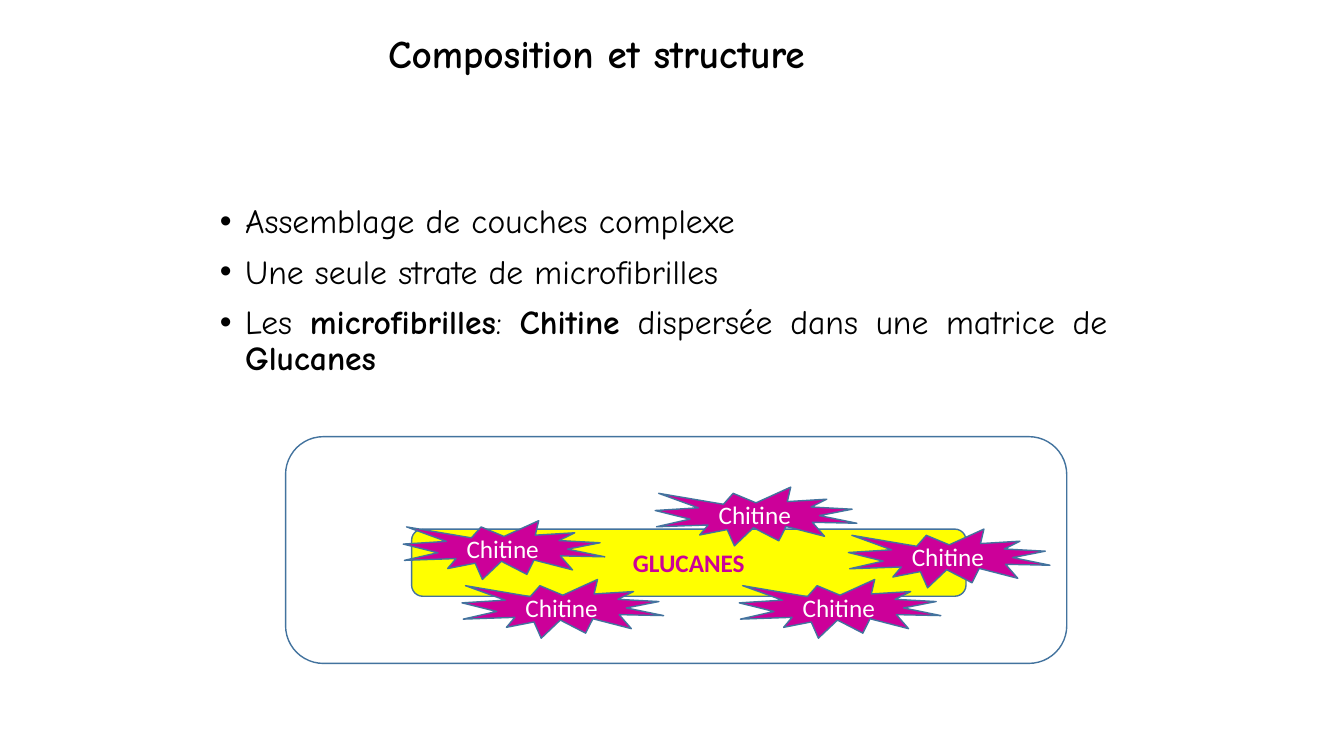
from dataclasses import dataclass
from lxml.etree import SubElement
from pptx import Presentation
from pptx.dml.color import RGBColor as Color
from pptx.enum.shapes import MSO_SHAPE as Preset
from pptx.enum.text import MSO_ANCHOR as Anchor, MSO_AUTO_SIZE as AutoSize, PP_ALIGN as Align
from pptx.oxml.ns import qn
from pptx.util import Inches, Pt


@dataclass
class Theme:
    black: Color = Color.from_string("000000")
    white: Color = Color.from_string("FFFFFF")
    yellow: Color = Color.from_string("FFFF00")
    magenta: Color = Color.from_string("CC0099")
    outline: Color = Color.from_string("43739E")
    heading_font: str = "Comic Neue"
    label_font: str = "Calibri"
    title_size: int = 28
    body_size: int = 24
    label_size: int = 18


theme = Theme()
presentation = Presentation()
presentation.slide_width = Inches(13.33)
presentation.slide_height = Inches(7.5)
slide = presentation.slides.add_slide(presentation.slide_layouts[5])
cell = presentation.slide_width / 160


def add_run(paragraph, text, font, size, color, bold=False):
    run = paragraph.add_run()
    run.text = text
    run.font.name = font
    run.font.size = Pt(size)
    run.font.color.rgb = color
    run.font.bold = bold


def add_panel(preset, columns_rows, fill, label="", color=None, bold=False):
    shape = slide.shapes.add_shape(preset, *(round(n * cell) for n in columns_rows))
    shape.shadow.inherit = False
    shape.fill.solid()
    shape.fill.fore_color.rgb = fill
    shape.line.color.rgb = theme.outline
    shape.line.width = Pt(1)
    if label:
        shape.text_frame.vertical_anchor = Anchor.MIDDLE
        paragraph = shape.text_frame.paragraphs[0]
        paragraph.alignment = Align.CENTER
        add_run(paragraph, label, theme.label_font, theme.label_size, color, bold)


title = slide.shapes.title
title.left, title.top, title.width, title.height = (round(n * cell) for n in (45, 3.4, 70, 6.4))
title.text_frame.auto_size = AutoSize.NONE
title.text_frame.vertical_anchor = Anchor.MIDDLE
heading = title.text_frame.paragraphs[0]
heading.alignment = Align.LEFT
heading.line_spacing = 0.9
add_run(heading, "Composition et structure", theme.heading_font, theme.title_size, theme.black, True)

bullets = [
    [("Assemblage de couches complexe", False)],
    [("Une seule strate de microfibrilles", False)],
    [("Les ", False), ("microfibrilles", True), (": ", False), ("Chitine", True),
     (" dispersée dans une matrice de ", False), ("Glucanes", True)],
]
body = slide.shapes.add_textbox(*(round(n * cell) for n in (25, 17.8, 108, 68.4)))
body.text_frame.word_wrap = True
body.text_frame.margin_top = Inches(0.55)
for index, runs in enumerate(bullets):
    paragraph = body.text_frame.add_paragraph() if index else body.text_frame.paragraphs[0]
    paragraph.alignment = Align.JUSTIFY
    paragraph.line_spacing = 0.9
    paragraph.space_before = Pt(10)
    properties = paragraph._p.get_or_add_pPr()
    properties.set("marL", str(Inches(0.25)))
    properties.set("indent", str(-Inches(0.25)))
    SubElement(properties, qn("a:buFont"), typeface="Arial")
    SubElement(properties, qn("a:buChar"), char="•")
    for text, bold in runs:
        add_run(paragraph, text, theme.heading_font, theme.body_size, theme.black, bold)

add_panel(Preset.ROUNDED_RECTANGLE, (34, 52, 93, 27), theme.white)
add_panel(Preset.ROUNDED_RECTANGLE, (49, 63, 66, 8), theme.yellow, "GLUCANES", theme.magenta, True)
for column, row in [(48, 62), (78, 58), (88, 69), (55, 69), (101, 63)]:
    add_panel(Preset.EXPLOSION1, (column, row, 24, 7), theme.magenta, "Chitine", theme.white)

presentation.save("out.pptx")
